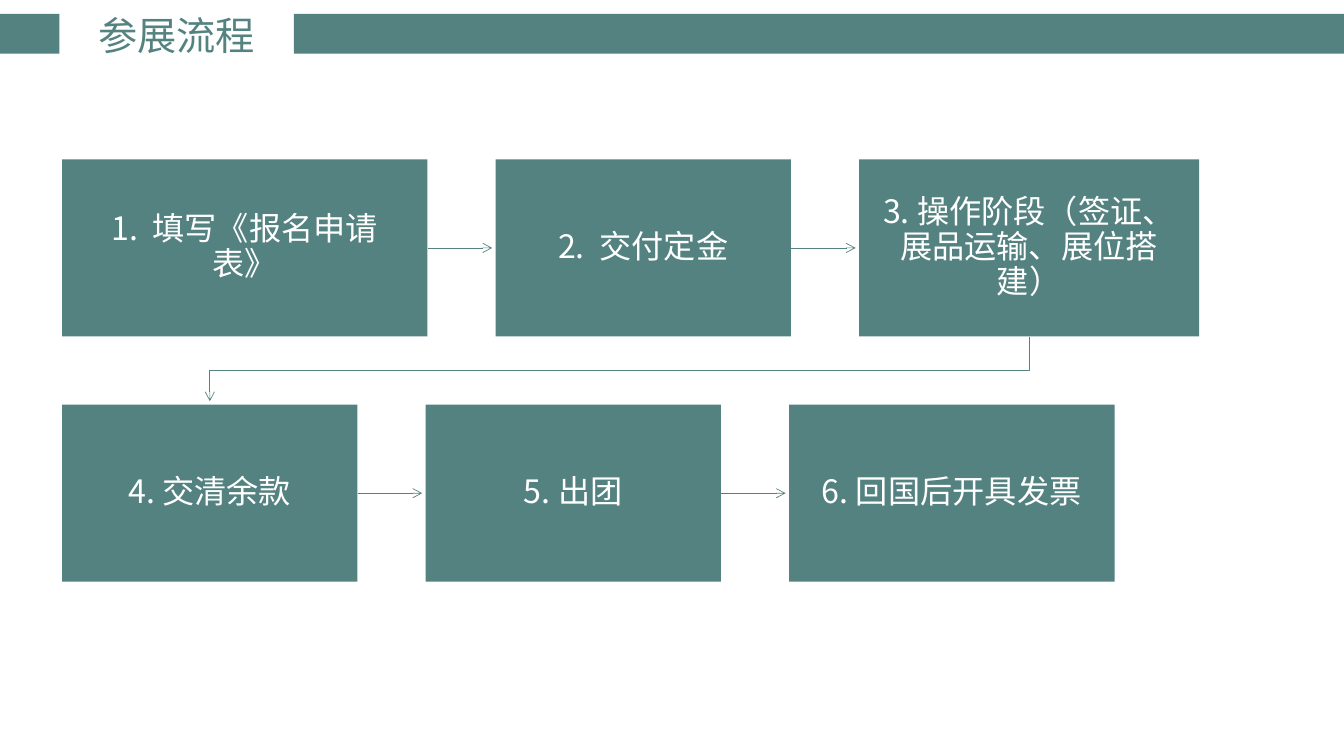
from lxml import etree
from pptx import Presentation
from pptx import util as u
from pptx.dml.color import RGBColor
from pptx.enum import shapes, text
from pptx.oxml.ns import qn

COLORS = {"teal": "548280", "white": "FFFFFF"}
FONT = "Noto Sans CJK SC"


class FlowSlide:
    """Draws on one slide in a single style; all lengths are in points."""

    def __init__(self, slide):
        self.shapes = slide.shapes

    def color(self, name):
        return RGBColor.from_string(COLORS[name])

    def block(self, left, top, width, height):
        block = self.shapes.add_shape(
            shapes.MSO_SHAPE.RECTANGLE,
            u.Pt(left), u.Pt(top), u.Pt(width), u.Pt(height))
        block.shadow.inherit = False
        block.fill.solid()
        block.fill.fore_color.rgb = self.color("teal")
        block.line.fill.background()
        return block

    def label(self, frame, wording, size, color, spacing=1.0):
        frame.text = wording
        frame.vertical_anchor = text.MSO_ANCHOR.MIDDLE
        paragraph = frame.paragraphs[0]
        paragraph.alignment = text.PP_ALIGN.CENTER
        paragraph.line_spacing = spacing
        font = paragraph.runs[0].font
        font.size = u.Pt(size)
        font.name = FONT
        font.color.rgb = self.color(color)
        properties = paragraph.runs[0]._r.get_or_add_rPr()
        etree.SubElement(properties, qn("a:ea"), typeface=FONT)

    def title(self, wording, left, top, width, height):
        box = self.shapes.add_textbox(
            u.Pt(left), u.Pt(top), u.Pt(width), u.Pt(height))
        box.text_frame.word_wrap = False
        self.label(box.text_frame, wording, 28, "teal")

    def step(self, wording, left, top, width, height):
        frame = self.block(left, top, width, height).text_frame
        frame.word_wrap = True
        frame.margin_left = frame.margin_right = u.Pt(13)
        frame.margin_top = frame.margin_bottom = u.Pt(13)
        self.label(frame, wording, 23, "white", 0.9)

    def style_arrow(self, arrow):
        arrow.line.color.rgb = self.color("teal")
        arrow.line.width = u.Pt(0.5)
        properties = arrow._element.spPr
        etree.SubElement(properties.find(qn("a:ln")), qn("a:tailEnd"), type="arrow")
        etree.SubElement(properties, qn("a:effectLst"))

    def arrow(self, start, end, y):
        self.style_arrow(self.shapes.add_connector(
            shapes.MSO_CONNECTOR.STRAIGHT,
            u.Pt(start), u.Pt(y), u.Pt(end), u.Pt(y)))

    def bent_arrow(self, points):
        start, *corners = [(u.Pt(x), u.Pt(y)) for x, y in points]
        builder = self.shapes.build_freeform(*start)
        builder.add_line_segments(corners, close=False)
        bend = builder.convert_to_shape()
        bend.fill.background()
        self.style_arrow(bend)


def main():
    deck = Presentation()
    deck.slide_width, deck.slide_height = u.Pt(960), u.Pt(540)
    page = FlowSlide(deck.slides.add_slide(deck.slide_layouts[6]))

    # Header band with the title in its gap
    page.block(0, 10, 42.5, 28.4)
    page.block(210, 10, 750, 28.4)
    page.title("参展流程", 62.6, 4.3, 127.4, 41)

    # Steps, row by row: wording and width
    rows = [
        [("1.  填写《报名申请表》", 261), ("2.  交付定金", 211),
         ("3. 操作阶段（签证、展品运输、展位搭建）", 243)],
        [("4. 交清余款", 211), ("5. 出团", 211), ("6. 回国后开具发票", 232.6)],
    ]
    margin, first_top, height, gap, tip_gap = 44.4, 113.8, 126.6, 48.6, 2.4
    tops = [first_top + row * (height + gap) for row in range(len(rows))]
    for steps, top in zip(rows, tops):
        left = margin
        for number, (wording, width) in enumerate(steps):
            if number:
                page.arrow(left - gap, left - tip_gap, top + height / 2)
            page.step(wording, left, top, width, height)
            left += width + gap

    # Turn from the last step of the first row to the second row
    third_center = margin + sum(w for _, w in rows[0][:2]) + 2 * gap + rows[0][2][1] / 2
    fourth_center = margin + rows[1][0][1] / 2
    bottom = first_top + height
    turn = bottom + gap / 2
    page.bent_arrow([(third_center, bottom), (third_center, turn),
                     (fourth_center, turn), (fourth_center, tops[1] - tip_gap)])

    deck.save("out.pptx")


if __name__ == "__main__":
    main()
